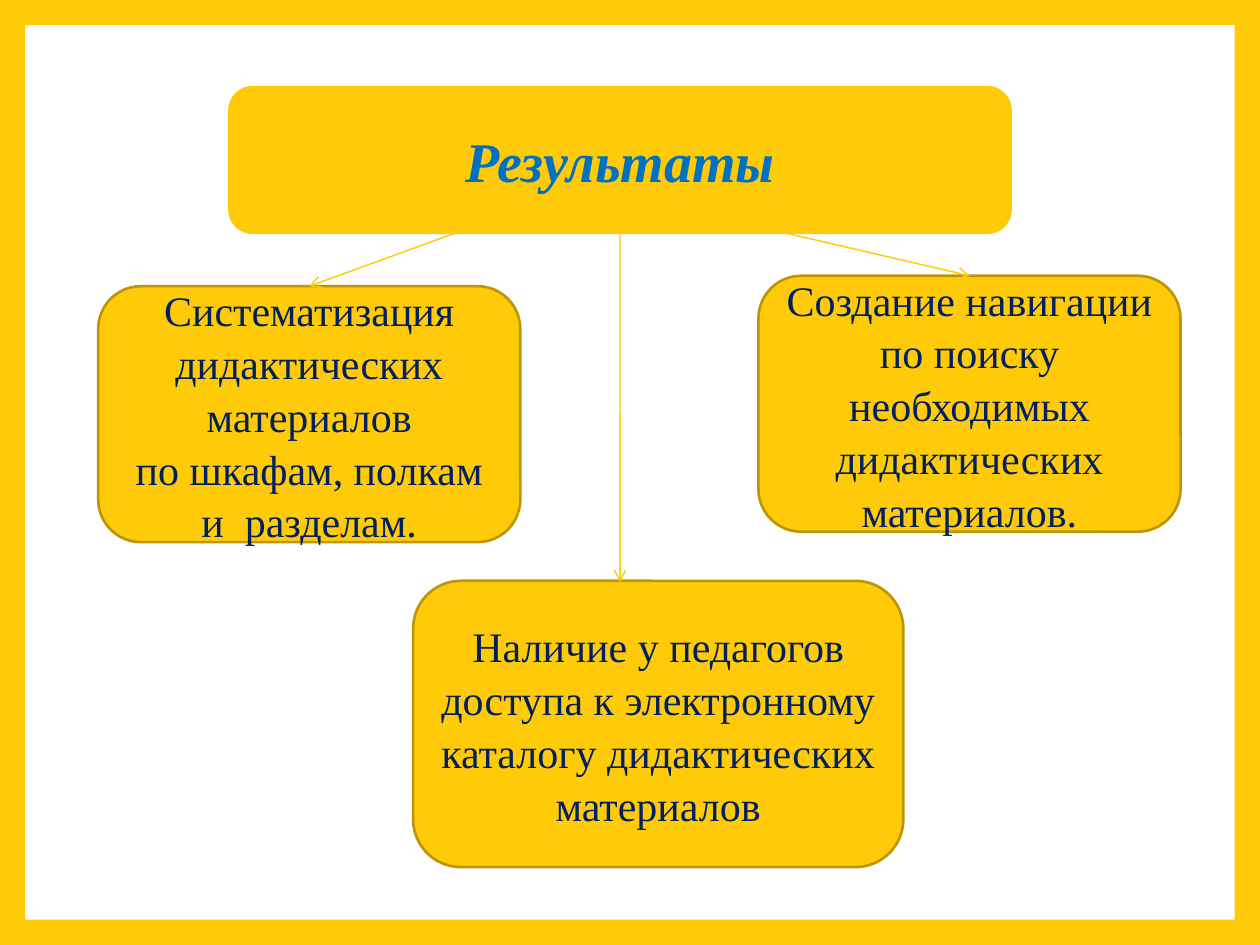
from lxml import etree
from pptx import Presentation
from pptx.dml.color import RGBColor
from pptx.enum.shapes import MSO_CONNECTOR, MSO_SHAPE
from pptx.enum.text import MSO_ANCHOR, MSO_AUTO_SIZE, PP_ALIGN
from pptx.oxml.ns import qn
from pptx.util import Cm, Pt

RECTANGLE = MSO_SHAPE.RECTANGLE
ROUNDED = MSO_SHAPE.ROUNDED_RECTANGLE
TITLE_BAND = MSO_SHAPE.FLOWCHART_ALTERNATE_PROCESS
STRAIGHT = MSO_CONNECTOR.STRAIGHT
MIDDLE = MSO_ANCHOR.MIDDLE
CENTER = PP_ALIGN.CENTER
NO_AUTOFIT = MSO_AUTO_SIZE.NONE
TOP, BOTTOM = 0, 2

FONT = "Times New Roman"
YELLOW, WHITE, GOLD = "FFCA08", "FFFFFF", "BD9506"
BLUE, NAVY = "0070C0", "002060"

CARDS = [
    ((1.98, 5.77, 8.51, 5.16),
     ["Систематизация дидактических материалов",
      "по шкафам, полкам и  разделам."]),
    ((8.33, 11.71, 9.88, 5.77),
     ["Наличие у педагогов доступа к электронному",
      "каталогу дидактических материалов"]),
    ((15.29, 5.56, 8.51, 5.16),
     ["Создание навигации по поиску",
      "необходимых дидактических материалов."]),
]


def color(hex_value):
    return RGBColor.from_string(hex_value)


def add_box(page, kind, box, fill, outline=None):
    shape = page.shapes.add_shape(kind, *map(Cm, box))
    shape.shadow.inherit = False
    shape.fill.solid()
    shape.fill.fore_color.rgb = color(fill)
    if outline:
        shape.line.color.rgb = color(outline)
        shape.line.width = Pt(1.5)
    else:
        shape.line.fill.background()
    return shape


def write_lines(shape, lines, size, hex_value, emphasis=False, spacing=1.0):
    frame = shape.text_frame
    frame.word_wrap = True
    frame.auto_size = NO_AUTOFIT
    frame.vertical_anchor = MIDDLE
    for index, line in enumerate(lines):
        para = frame.add_paragraph() if index else frame.paragraphs[0]
        para.alignment = CENTER
        para.line_spacing = spacing
        span = para.add_run()
        span.text = line
        span.font.name = FONT
        span.font.size = Pt(size)
        span.font.bold = span.font.italic = emphasis
        span.font.color.rgb = color(hex_value)


def add_title(page, box):
    band = add_box(page, TITLE_BAND, box, YELLOW)
    title = page.shapes.title
    title.left, title.top, title.width, title.height = map(Cm, box)
    title.element.addprevious(band.element)
    write_lines(title, ["Результаты"], 32, BLUE, emphasis=True)
    return band


def add_card(page, box, lines):
    card = add_box(page, ROUNDED, box, YELLOW, GOLD)
    write_lines(card, lines, 24, NAVY, spacing=1.05)
    return card


def add_arrow(page, start, end):
    arrow = page.shapes.add_connector(STRAIGHT, *map(Cm, start + end))
    arrow.line.color.rgb = color(YELLOW)
    arrow.line.width = Pt(0.79)
    etree.SubElement(arrow.line._get_or_add_ln(), qn("a:tailEnd"), type="arrow")
    etree.SubElement(arrow.element.spPr, qn("a:effectLst"))
    return arrow


def build_results(page, box):
    page.background.fill.solid()
    page.background.fill.fore_color.rgb = color(YELLOW)
    left, top, width, height = box
    margin = 0.51
    panel = add_box(page, RECTANGLE, (left + margin, top + margin,
                                      width - 2 * margin, height - 2 * margin), WHITE)
    page.shapes.title.element.addprevious(panel.element)
    band = add_title(page, (left + 4.6, top + 1.73, 15.8, 2.99))
    cards = [add_card(page, (left + x, top + y, w, h), lines)
             for (x, y, w, h), lines in CARDS]

    for card, start_x in ((cards[0], 9.53), (cards[2], 15.29)):
        arrow = add_arrow(page, (left + start_x, top + 4.57), (left + start_x, top + 5.6))
        arrow.end_connect(card, TOP)
    center = left + 12.5
    arrow = add_arrow(page, (center, top + 4.72), (center, top + 11.73))
    arrow.begin_connect(band, BOTTOM)


def main():
    deck = Presentation()
    deck.slide_width, deck.slide_height = Cm(25.4), Cm(19.05)
    page = deck.slides.add_slide(deck.slide_layouts[5])
    build_results(page, (0, 0, 25.4, 19.05))
    deck.save("out.pptx")


if __name__ == "__main__":
    main()
